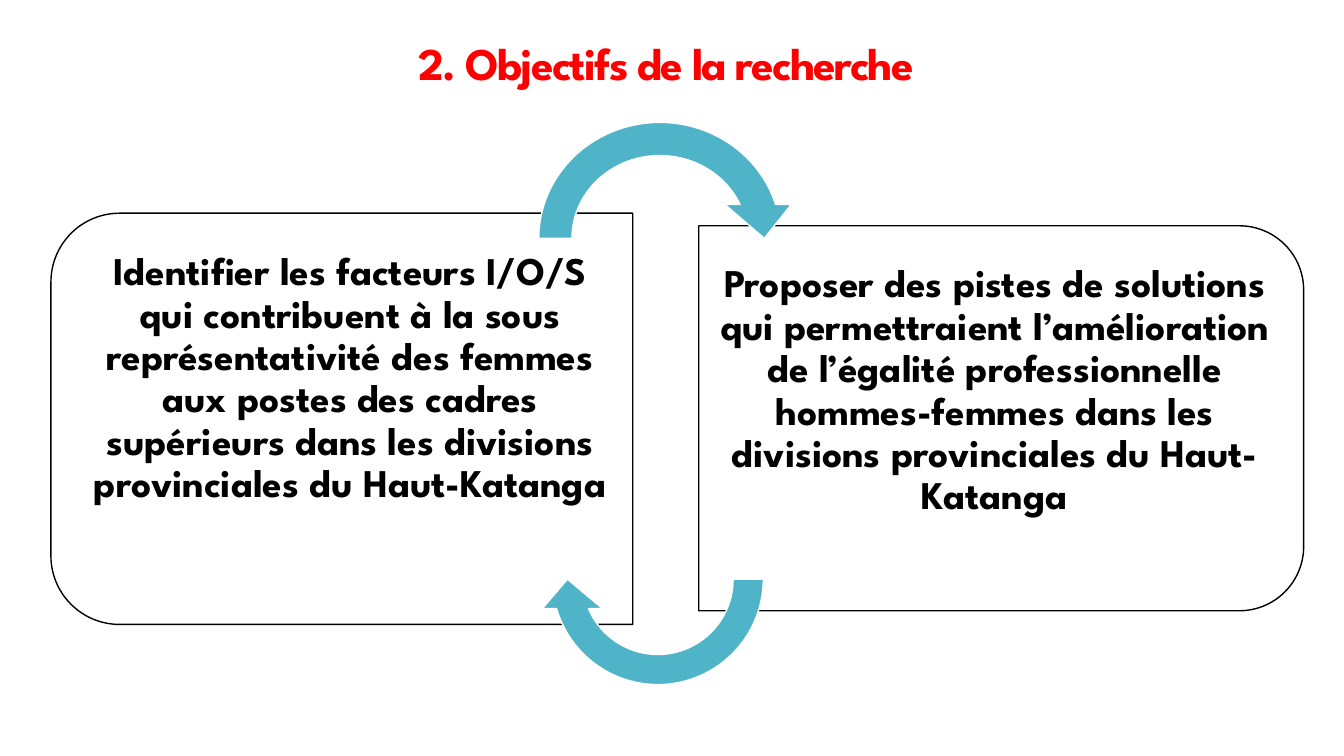
from pptx import Presentation
from pptx.dml.color import RGBColor
from pptx.enum.shapes import MSO_SHAPE
from pptx.enum.text import MSO_ANCHOR, MSO_AUTO_SIZE, PP_ALIGN
from pptx.util import Inches, Pt

RED = RGBColor(0xFF, 0x00, 0x00)
TEAL = RGBColor(0x50, 0xB4, 0xC8)
BLACK = RGBColor(0x00, 0x00, 0x00)
WHITE = RGBColor(0xFF, 0xFF, 0xFF)


class Deck:
    font = "League Spartan"
    turn_angles = (0.125, 11.423, 204.577, 108, 0.125)

    def __init__(self):
        self.prs = Presentation()
        self.prs.slide_width = Inches(13.33)
        self.prs.slide_height = Inches(7.5)
        self.s = self.prs.slides.add_slide(self.prs.slide_layouts[5])

    def frame(self, x, y, w, h):
        col, row = self.prs.slide_width / 100, self.prs.slide_height / 100
        return int(x * col), int(y * row), int(w * col), int(h * row)

    def fill_text(self, tf, text, size, color, spacing):
        tf.word_wrap = True
        tf.auto_size = MSO_AUTO_SIZE.NONE
        p = tf.paragraphs[0]
        p.alignment = PP_ALIGN.CENTER
        p.line_spacing = spacing
        r = p.add_run()
        r.text = text
        r.font.name = self.font
        r.font.size = Pt(size)
        r.font.bold = True
        r.font.color.rgb = color
        return r

    def title(self, text, x, y, w, h):
        sp = self.s.shapes.title
        sp.left, sp.top, sp.width, sp.height = self.frame(x, y, w, h)
        sp.text_frame.vertical_anchor = MSO_ANCHOR.MIDDLE
        r = self.fill_text(sp.text_frame, text, 32.4, RED, 0.85)
        r._r.get_or_add_rPr().set("spc", "-120")

    def shape(self, kind, box, adjustments, fill, line, rotation):
        sp = self.s.shapes.add_shape(kind, *box)
        sp.shadow.inherit = False
        for i, value in enumerate(adjustments):
            sp.adjustments[i] = value
        sp.fill.solid()
        sp.fill.fore_color.rgb = fill
        sp.line.color.rgb = line
        sp.line.width = Pt(1)
        sp.rotation = rotation

    def panel(self, x, y, w, h, rotation):
        left, top, width, height = self.frame(x, y, w, h)
        shift = (width - height) // 2
        box = (left + shift, top - shift, height, width)
        self.shape(MSO_SHAPE.ROUND_2_SAME_RECTANGLE, box, (0.167, 0), WHITE, BLACK, rotation)

    def text(self, text, x, y, w, h, inset_left, inset_right):
        tf = self.s.shapes.add_textbox(*self.frame(x, y, w, h)).text_frame
        tf.margin_left, tf.margin_right = Inches(inset_left), Inches(inset_right)
        tf.margin_top = tf.margin_bottom = Inches(0.19)
        tf.vertical_anchor = MSO_ANCHOR.TOP
        self.fill_text(tf, text, 28, BLACK, 0.9)

    def arrow(self, x, y, w, h, rotation=0):
        self.shape(MSO_SHAPE.CIRCULAR_ARROW, self.frame(x, y, w, h),
                   self.turn_angles, TEAL, WHITE, rotation)


def main():
    deck = Deck()
    deck.title("2. Objectifs de la recherche", 5.4, 4.8, 88.37, 8)
    deck.panel(3.79, 28.2, 43.29, 54.4, 270)
    deck.text("Identifier les facteurs I/O/S qui contribuent à la sous "
              "représentativité des femmes aux postes des cadres supérieurs "
              "dans les divisions provinciales du Haut-Katanga",
              5.33, 30.8, 41.79, 49.2, 0.12, 0.17)
    deck.panel(51.99, 29.87, 45.01, 50.93, 90)
    deck.text("Proposer des pistes de solutions qui permettraient "
              "l’amélioration de l’égalité professionnelle hommes-femmes "
              "dans les divisions provinciales du Haut-Katanga",
              51.99, 32.4, 43.66, 46, 0.17, 0.12)
    deck.arrow(38.86, 14, 20.48, 35.07)
    deck.arrow(39.98, 60.67, 17.93, 31.87, 180)
    deck.prs.save("out.pptx")


if __name__ == "__main__":
    main()
